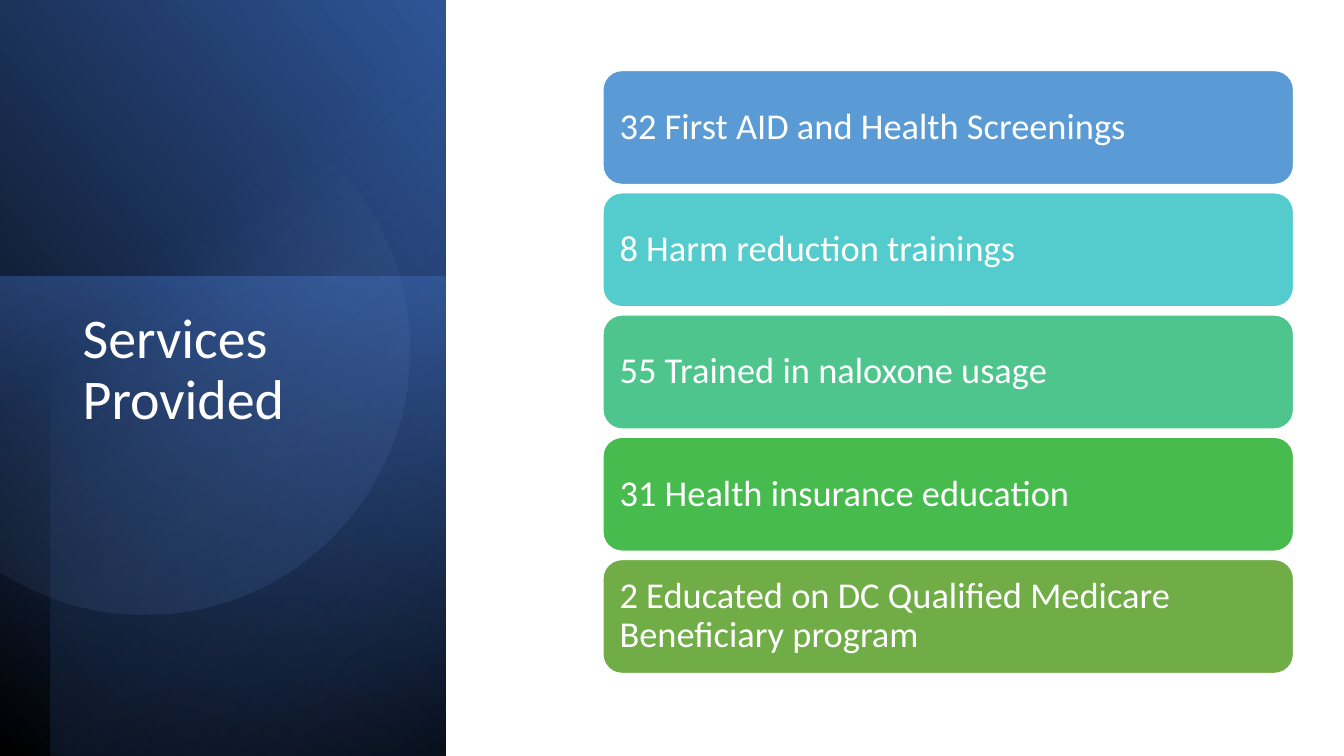
import math
from dataclasses import dataclass

from pptx import Presentation
from pptx.dml.color import RGBColor
from pptx.enum.shapes import MSO_SHAPE
from pptx.enum.text import MSO_ANCHOR, MSO_AUTO_SIZE, PP_ALIGN
from pptx.oxml import parse_xml
from pptx.oxml.ns import nsdecls
from pptx.util import Emu, Inches, Pt

RECTANGLE = MSO_SHAPE.RECTANGLE
ROUNDED = MSO_SHAPE.ROUNDED_RECTANGLE
TOP, MIDDLE = MSO_ANCHOR.TOP, MSO_ANCHOR.MIDDLE
LEFT = PP_ALIGN.LEFT
NO_AUTOFIT = MSO_AUTO_SIZE.NONE

FONT = "Calibri"
WIDTH, HEIGHT = Inches(13.33), Inches(7.5)
COLORS = {
    "white": "FFFFFF", "black": "000000", "navy": "203864",
    "deep": "2F5597", "blue": "4472C4", "pale": "8FAADC",
    "sky": "5B9BD5", "turquoise": "54CCCD", "mint": "4DC58D",
    "green": "48BB4F", "olive": "70AD47",
}


@dataclass(frozen=True)
class Box:
    """Left, top, width and height in percent of the slide."""
    left: float
    top: float
    width: float
    height: float

    def lengths(self) -> tuple[Emu, Emu, Emu, Emu]:
        return across(self.left), down(self.top), across(self.width), down(self.height)


@dataclass(frozen=True)
class Stop:
    position: int
    color: str
    opacity: int = 100


@dataclass(frozen=True)
class Panel:
    box: Box
    rotation: int
    flipped: bool
    angle: int
    stops: tuple[Stop, ...]


@dataclass(frozen=True)
class Service:
    text: str
    color: str


PANELS = (
    Panel(Box(0, 0, 33.16, 100.27), 90, True, 310,
          (Stop(0, "black"), Stop(100, "deep"))),
    Panel(Box(0, 36.53, 33.16, 63.47), 270, False, 190,
          (Stop(0, "blue", 50), Stop(100, "navy", 0))),
    Panel(Box(3.75, 0, 29.41, 100), 270, True, 220,
          (Stop(0, "black", 59), Stop(69, "blue", 0))),
)
DISC_X, DISC_Y, DISC_RADIUS = 10.73, 46.27, 19.73  # radius in percent of the width
DISC_ANGLE = 51.6
DISC_STOPS = (Stop(39, "pale", 0), Stop(100, "deep", 26))
DISC_STEPS = 120

TITLE_BOX = Box(5.4, 40.4, 23.63, 44.8)
SERVICES = (
    Service("32 First AID and Health Screenings", "sky"),
    Service("8 Harm reduction trainings", "turquoise"),
    Service("55 Trained in naloxone usage", "mint"),
    Service("31 Health insurance education", "green"),
    Service("2 Educated on DC Qualified Medicare Beneficiary program", "olive"),
)
FIRST_CARD = Box(44.86, 9.33, 51.39, 15.07)
CARD_PITCH = 16.17


def across(percent: float) -> Emu:
    return Emu(round(WIDTH * percent / 100))


def down(percent: float) -> Emu:
    return Emu(round(HEIGHT * percent / 100))


def rgb(name: str) -> RGBColor:
    return RGBColor.from_string(COLORS[name])


def fill_gradient(shape, stops: tuple[Stop, ...], angle: float) -> None:
    """Give a borderless shape a linear gradient with opacities."""
    shape.shadow.inherit = False
    shape.line.fill.background()
    shape.fill.background()
    marks = "".join(
        f'<a:gs pos="{stop.position * 1000}"><a:srgbClr val="{COLORS[stop.color]}">'
        f'<a:alpha val="{stop.opacity * 1000}"/></a:srgbClr></a:gs>'
        for stop in stops)
    gradient = parse_xml(
        f'<a:gradFill {nsdecls("a")} rotWithShape="1"><a:gsLst>{marks}</a:gsLst>'
        f'<a:lin ang="{round(angle * 60000)}" scaled="0"/></a:gradFill>')
    properties = shape.element.spPr
    properties.replace(properties.find("{*}noFill"), gradient)


def draw_panel(page, panel: Panel) -> None:
    """Draw a quarter-turned rectangle that covers the panel's box."""
    left, top, width, height = panel.box.lengths()
    shift = (width - height) // 2
    shape = page.shapes.add_shape(RECTANGLE, left + shift, top - shift, height, width)
    shape.rotation = panel.rotation
    if panel.flipped:
        shape.element.spPr.xfrm.set("flipH", "1")
    fill_gradient(shape, panel.stops, panel.angle)


def draw_disc(page) -> None:
    """Draw the circle, cut off at the slide's left edge."""
    center_x, center_y, radius = across(DISC_X), down(DISC_Y), across(DISC_RADIUS)
    limit = math.pi - math.acos(center_x / radius)
    turns = [limit * (2 * step / DISC_STEPS - 1) for step in range(DISC_STEPS + 1)]
    points = [(round(center_x + radius * math.cos(turn)),
               round(center_y + radius * math.sin(turn))) for turn in turns]
    builder = page.shapes.build_freeform(*points[0])
    builder.add_line_segments(points[1:], close=True)
    fill_gradient(builder.convert_to_shape(), DISC_STOPS, DISC_ANGLE)


def write_text(shape, text: str, size: int, anchor: MSO_ANCHOR) -> None:
    frame = shape.text_frame
    frame.word_wrap = True
    frame.auto_size = NO_AUTOFIT
    frame.vertical_anchor = anchor
    para = frame.paragraphs[0]
    para.alignment = LEFT
    para.line_spacing = 0.9
    span = para.add_run()
    span.text = text
    span.font.name = FONT
    span.font.size = Pt(size)
    span.font.color.rgb = rgb("white")


def draw_title(page) -> None:
    title = page.shapes.title
    title.left, title.top, title.width, title.height = TITLE_BOX.lengths()
    write_text(title, "Services Provided", 40, TOP)
    # Bring the title in front of the panels
    title.element.getparent().append(title.element)


def draw_service(page, service: Service, row: int) -> None:
    box = Box(FIRST_CARD.left, FIRST_CARD.top + row * CARD_PITCH,
              FIRST_CARD.width, FIRST_CARD.height)
    card = page.shapes.add_shape(ROUNDED, *box.lengths())
    card.shadow.inherit = False
    card.fill.solid()
    card.fill.fore_color.rgb = rgb(service.color)
    card.line.color.rgb = rgb("white")
    card.line.width = Pt(1)
    frame = card.text_frame
    frame.margin_left = frame.margin_right = across(0.83)
    frame.margin_top = frame.margin_bottom = down(1.47)
    write_text(card, service.text, 26, MIDDLE)


def main() -> None:
    deck = Presentation()
    deck.slide_width, deck.slide_height = WIDTH, HEIGHT
    page = deck.slides.add_slide(deck.slide_layouts.get_by_name("Title Only"))

    # Left side: layered gradients and the title
    for panel in PANELS:
        draw_panel(page, panel)
    draw_disc(page)
    draw_title(page)

    # Right side: one card per service
    for row, service in enumerate(SERVICES):
        draw_service(page, service, row)

    deck.save("out.pptx")


if __name__ == "__main__":
    main()
